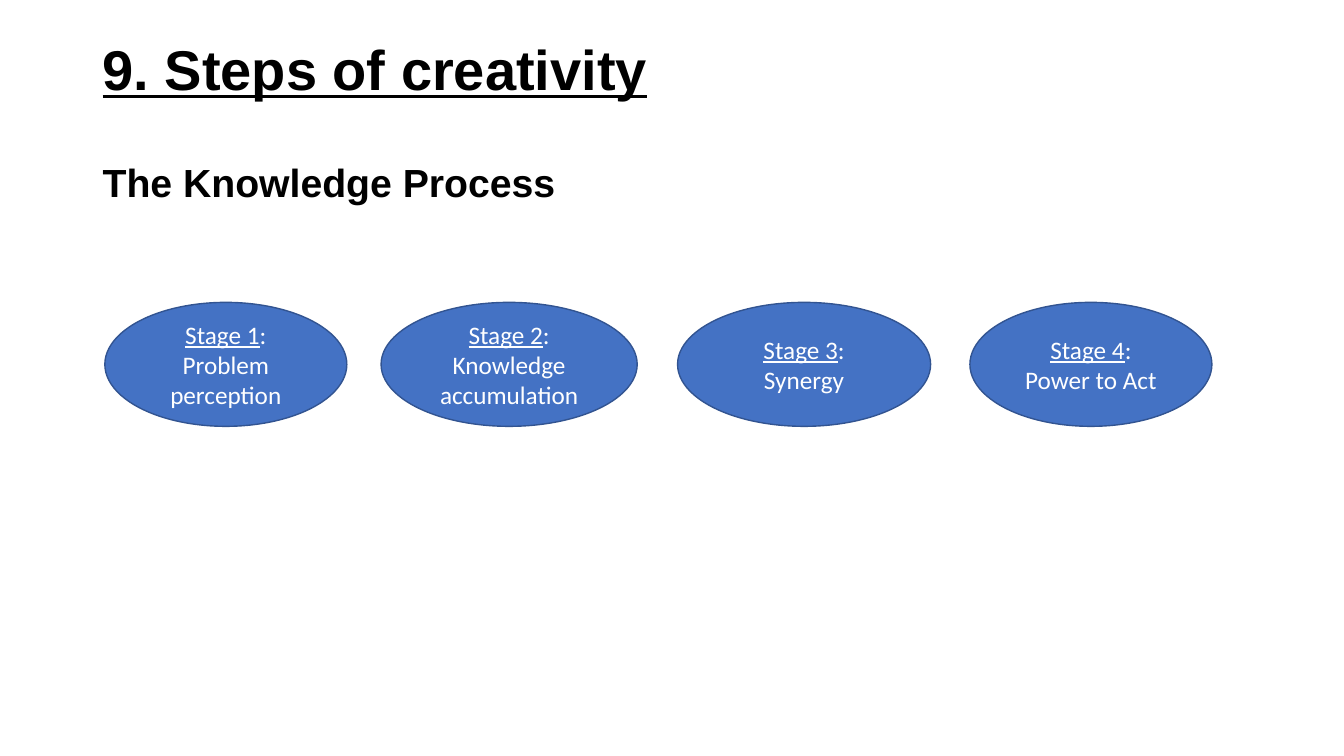
from dataclasses import dataclass

from pptx import Presentation
from pptx import util as u
from pptx.dml.color import RGBColor
from pptx.enum import shapes, text
from pptx.slide import Slide

BLACK = RGBColor(0x00, 0x00, 0x00)
WHITE = RGBColor(0xFF, 0xFF, 0xFF)
BLUE = RGBColor(0x44, 0x72, 0xC4)
DARK_BLUE = RGBColor(0x32, 0x54, 0x91)

STAGE_TOP = 3.0
STAGE_HEIGHT = 1.23


@dataclass
class Stage:
    name: str
    left: float
    width: float


STAGES = [
    Stage("Problem perception", 1.04, 2.4),
    Stage("Knowledge accumulation", 3.78, 2.54),
    Stage("Synergy", 6.72, 2.51),
    Stage("Power to Act", 9.62, 2.4),
]


def add_run(paragraph, content: str, *, size: float, font: str, color: RGBColor,
            bold: bool = False, underline: bool = False) -> None:
    run = paragraph.add_run()
    run.text = content
    run.font.size = u.Pt(size)
    run.font.name = font
    run.font.color.rgb = color
    run.font.bold = bold
    run.font.underline = underline


def add_heading(slide: Slide, content: str, *, top: float, height: float, size: float,
                margin_top: float = 0.05, space_before: float = 0,
                underline: bool = False) -> None:
    box = slide.shapes.add_textbox(u.Inches(0.92), u.Inches(top), u.Inches(11.5), u.Inches(height))
    frame = box.text_frame
    frame.word_wrap = True
    frame.margin_top = u.Inches(margin_top)
    paragraph = frame.paragraphs[0]
    paragraph.line_spacing = 0.9
    paragraph.space_before = u.Pt(space_before)
    add_run(paragraph, content, size=size, font="Arial", color=BLACK, bold=True, underline=underline)


def add_stage(slide: Slide, number: int, stage: Stage) -> None:
    shape = slide.shapes.add_shape(
        shapes.MSO_SHAPE.OVAL, u.Inches(stage.left), u.Inches(STAGE_TOP),
        u.Inches(stage.width), u.Inches(STAGE_HEIGHT))
    shape.shadow.inherit = False
    shape.fill.solid()
    shape.fill.fore_color.rgb = BLUE
    shape.line.color.rgb = DARK_BLUE
    shape.line.width = u.Pt(1)
    frame = shape.text_frame
    frame.word_wrap = True
    frame.vertical_anchor = text.MSO_ANCHOR.MIDDLE
    paragraph = frame.paragraphs[0]
    paragraph.alignment = text.PP_ALIGN.CENTER
    add_run(paragraph, f"Stage {number}", size=18, font="Calibri", color=WHITE, underline=True)
    add_run(paragraph, f": {stage.name}", size=18, font="Calibri", color=WHITE)


def main() -> None:
    presentation = Presentation()
    presentation.slide_width = u.Inches(13.33)
    presentation.slide_height = u.Inches(7.5)
    slide = presentation.slides.add_slide(presentation.slide_layouts[6])

    # Headings
    add_heading(slide, "The Knowledge Process", top=1.57, height=5.18, size=28, space_before=10)
    add_heading(slide, "9. Steps of creativity", top=0.4, height=1.17, size=40,
                margin_top=0.02, underline=True)

    # Row of stages
    for number, stage in enumerate(STAGES, start=1):
        add_stage(slide, number, stage)

    presentation.save("out.pptx")


if __name__ == "__main__":
    main()
